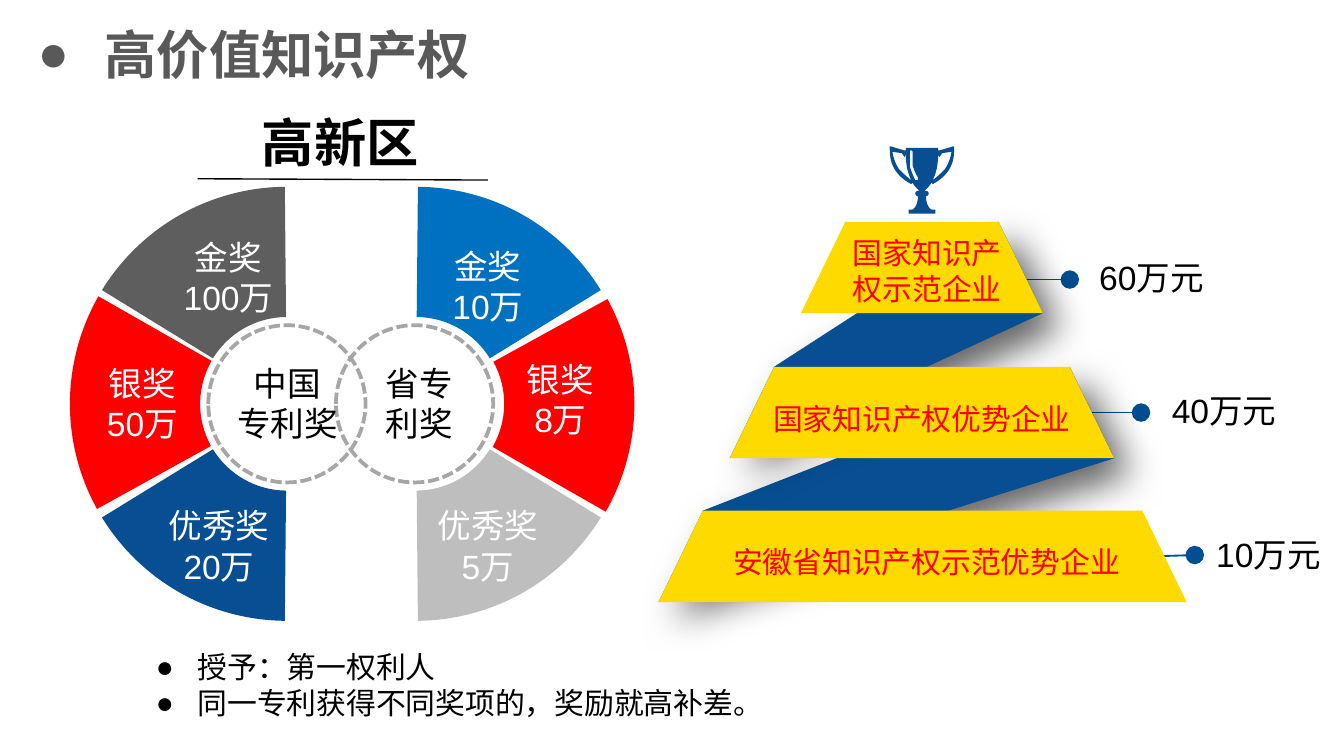
from lxml.etree import SubElement
from pptx import Presentation
from pptx.dml.color import RGBColor
from pptx.enum.dml import MSO_LINE_DASH_STYLE as Dash
from pptx.enum.shapes import MSO_CONNECTOR as Connector, MSO_SHAPE as Shape
from pptx.enum.text import MSO_ANCHOR as Anchor, MSO_AUTO_SIZE as AutoSize, PP_ALIGN as Align
from pptx.oxml.ns import qn
from pptx.util import Inches, Pt

COLORS = {
    "black": "000000", "white": "FFFFFF", "title": "595959", "red": "FF0000",
    "sky": "0070C0", "silver": "BEBEBE", "gray": "5E5E5E", "navy": "074F92",
    "dash": "A6A6A6", "pointer": "034D92", "yellow": "FEDA00",
}
RING_SIZE = 3.23
LEFT_RING, RIGHT_RING, RING_TOP = 0.52, 1.48, 1.39
CORNER_ARC = (162.32, 197.05, 0.3)
SIDE_ARC = (161.85, 197.05, 0.3)
TIER_HEIGHT, TIER_SLANT = 0.68, 0.33
TROPHY_AXIS = 6.86
CUP_OUTLINE = [
    (6.86, 1.1), (6.74, 1.1), (6.74, 1.11, 6.74, 1.12, 6.74, 1.12), (6.73, 1.12),
    (6.63, 1.09), (6.62, 1.09), (6.62, 1.11), (6.62, 1.19, 6.64, 1.24, 6.67, 1.28),
    (6.7, 1.32, 6.74, 1.35, 6.78, 1.37), (6.79, 1.36),
    (6.8, 1.38, 6.82, 1.4, 6.84, 1.42), (6.83, 1.42),
    (6.82, 1.42, 6.81, 1.43, 6.81, 1.44), (6.81, 1.45, 6.82, 1.46, 6.83, 1.46),
    (6.83, 1.5, 6.82, 1.54, 6.79, 1.56), (6.76, 1.56), (6.76, 1.59), (6.86, 1.59),
]
HANDLE_GAP = [
    (6.78, 1.34), (6.75, 1.28, 6.74, 1.22, 6.74, 1.15), (6.73, 1.17), (6.71, 1.14),
    (6.64, 1.13), (6.65, 1.19, 6.67, 1.23, 6.69, 1.26), (6.72, 1.29, 6.75, 1.32, 6.78, 1.34),
]
CUP_SHINE = [
    (6.77, 1.13), (6.77, 1.17, 6.77, 1.2, 6.77, 1.24), (6.78, 1.27, 6.79, 1.3, 6.81, 1.34),
    (6.81, 1.34, 6.82, 1.34, 6.83, 1.34), (6.83, 1.33, 6.83, 1.33, 6.83, 1.32),
    (6.81, 1.29, 6.8, 1.26, 6.79, 1.23), (6.79, 1.2, 6.79, 1.17, 6.79, 1.13),
    (6.79, 1.12, 6.78, 1.12, 6.78, 1.12), (6.77, 1.12, 6.77, 1.12, 6.77, 1.13),
]


def color(name):
    return RGBColor.from_string(COLORS[name])


def paint(shape, fill):
    shape.shadow.inherit = False
    shape.fill.solid()
    shape.fill.fore_color.rgb = color(fill)
    shape.line.fill.background()


def write(frame, lines, size, ink, align=Align.LEFT, bold=False, font="Arial", indent=0):
    frame.text = "\n".join(lines)
    for paragraph in frame.paragraphs:
        spacing = {"alignment": align, "space_before": Pt(0), "space_after": Pt(0)}
        for name, value in spacing.items():
            setattr(paragraph, name, value)
        if indent:
            props = paragraph._p.get_or_add_pPr()
            props.set("marL", str(Inches(indent)))
            props.set("indent", str(-Inches(indent)))
            SubElement(props, qn("a:buFont"), typeface="Arial")
            SubElement(props, qn("a:buChar"), char="●")
        for run in paragraph.runs:
            for name, value in {"name": font, "size": Pt(size), "bold": bold}.items():
                setattr(run.font, name, value)
            run.font.color.rgb = color(ink)


def place(placeholder, left, top, width, height, frame_format):
    box = {"left": left, "top": top, "width": width, "height": height}
    for name, value in box.items():
        setattr(placeholder, name, Inches(value))
    for name, value in frame_format.items():
        setattr(placeholder.text_frame, name, value)


def add_label(shapes, left, top, width, height, lines, size, ink, **style):
    frame = shapes.add_textbox(*map(Inches, (left, top, width, height))).text_frame
    frame.word_wrap = True
    frame.auto_size = AutoSize.SHAPE_TO_FIT_TEXT
    write(frame, lines, size, ink, **style)


def add_sector(shapes, left, fill, arc, flips=(), rotation=0):
    sector = shapes.add_shape(
        Shape.BLOCK_ARC, *map(Inches, (left, RING_TOP, RING_SIZE, RING_SIZE)))
    for index, value in enumerate(arc):
        sector.adjustments[index] = value
    sector.rotation = rotation
    for flip in flips:
        sector._element.spPr.xfrm.set(flip, "1")
    paint(sector, fill)


def add_hub(shapes, left):
    hub = shapes.add_shape(Shape.OVAL, *map(Inches, (left, 2.42, 1.17, 1.17)))
    hub.shadow.inherit = False
    hub.fill.background()
    hub.line.color.rgb = color("dash")
    hub.line.width = Pt(2)
    hub.line.dash_style = Dash.SQUARE_DOT
    hub.line._get_or_add_ln().find(qn("a:prstDash")).set("val", "sysDash")


def add_line(shapes, start, end, ink, width, dot=False):
    line = shapes.add_connector(Connector.STRAIGHT, *map(Inches, start + end))
    line.line.color.rgb = color(ink)
    line.line.width = Pt(width)
    if dot:
        SubElement(line.line._get_or_add_ln(), qn("a:tailEnd"), type="oval", w="lg", len="lg")
    SubElement(line._element.spPr, qn("a:effectLst"))


def add_outline(shapes, contours, fill):
    contours = [[(Inches(x), Inches(y)) for x, y in contour] for contour in contours]
    builder = shapes.build_freeform(*contours[0][0])
    for index, contour in enumerate(contours):
        if index:
            builder.move_to(*contour[0])
        builder.add_line_segments(contour[1:], close=True)
    outline = builder.convert_to_shape()
    paint(outline, fill)
    return outline


def cast_shadow(shape):
    effects = shape._element.spPr.find(qn("a:effectLst"))
    shadow = SubElement(effects, qn("a:outerShdw"), blurRad=str(Pt(20)), dist=str(Pt(12)),
                        dir="2700000", algn="tl", rotWithShape="0")
    tint = SubElement(shadow, qn("a:srgbClr"), val=COLORS["black"])
    SubElement(tint, qn("a:alpha"), val="60000")


def trace(segments, steps=6):
    points = [segments[0]]
    for segment in segments[1:]:
        if len(segment) == 2:
            points.append(segment)
            continue
        knots = [points[-1], segment[:2], segment[2:4], segment[4:]]
        for step in range(1, steps + 1):
            t = step / steps
            weights = ((1 - t) ** 3, 3 * t * (1 - t) ** 2, 3 * t * t * (1 - t), t ** 3)
            points.append(tuple(sum(w * knot[axis] for w, knot in zip(weights, knots))
                                for axis in (0, 1)))
    return points


def mirror(points):
    return [(2 * TROPHY_AXIS - x, y) for x, y in reversed(points)]


def add_trophy(shapes):
    cup, gap = trace(CUP_OUTLINE), trace(HANDLE_GAP)
    add_outline(shapes, [cup + mirror(cup), gap, mirror(gap), trace(CUP_SHINE)], "navy")


def tier_corners(left, top, right):
    bottom = top + TIER_HEIGHT
    return [(left + TIER_SLANT, top), (right - TIER_SLANT, top), (right, bottom), (left, bottom)]


def add_pyramid(shapes):
    group = shapes.add_group_shape().shapes
    tiers = [tier_corners(*tier) for tier in
             ((5.96, 1.65, 7.76), (5.43, 2.73, 8.29), (4.9, 3.8, 8.83))]
    for upper, lower in reversed(list(zip(tiers, tiers[1:]))):
        cast_shadow(add_outline(group, [[upper[1], lower[0], lower[3], upper[2]]], "navy"))
    for tier in tiers:
        add_outline(group, [tier], "yellow")
    add_label(group, 6.2, 1.7, 1.4, 0.64, ["国家知识产权示范企业"], 16, "red", align=Align.CENTER)
    for left, top, width, name in ((5.59, 2.93, 2.54, "国家知识产权优势企业"),
                                   (5.26, 4, 3.27, "安徽省知识产权示范优势企业")):
        add_label(shapes, left, top, width, 0.37, [name], 16, "red", align=Align.CENTER)
    for left, top, amount in ((8.08, 1.86, "60万元"), (8.62, 2.85, "40万元"),
                              (8.95, 3.92, "10万元")):
        add_label(shapes, left, top, 0.98, 0.4, [amount], 18, "black")


def add_award_rings(shapes):
    add_sector(shapes, LEFT_RING, "red", SIDE_ARC, rotation=241.3)
    add_sector(shapes, RIGHT_RING + 0.01, "red", SIDE_ARC, rotation=61.4)
    for left, fill, flips in ((RIGHT_RING, "sky", ()), (RIGHT_RING, "silver", ("flipV",)),
                              (LEFT_RING, "gray", ("flipH",)),
                              (LEFT_RING, "navy", ("flipH", "flipV"))):
        add_sector(shapes, left, fill, CORNER_ARC, flips)
    for left in (1.55, 2.5):
        add_hub(shapes, left)
    awards = [
        (1.61, 2.65, "中国", "专利奖", "black"), (2.59, 2.65, "省专", "利奖", "black"),
        (1.17, 1.71, "金奖", "100万", "white"), (0.53, 2.65, "银奖", "50万", "white"),
        (1.1, 3.71, "优秀奖", "20万", "white"), (3.1, 1.78, "金奖", "10万", "white"),
        (3.64, 2.62, "银奖", "8万", "white"), (3.1, 3.71, "优秀奖", "5万", "white"),
    ]
    for left, top, award, amount, ink in awards:
        add_label(shapes, left, top, 1.06, 0.71, [award, amount], 18, ink, align=Align.CENTER)


def main():
    deck = Presentation()
    deck.slide_width, deck.slide_height = Inches(10), Inches(10 * 9 / 16)
    slide = deck.slides.add_slide(deck.slide_layouts[1])
    shapes = slide.shapes
    title, notes = shapes.title, slide.placeholders[1]
    place(title, 0.28, 0.19, 3.48, 0.42, {
        "margin_left": 0, "margin_right": 0, "vertical_anchor": Anchor.MIDDLE,
        "word_wrap": True, "auto_size": AutoSize.NONE})
    write(title.text_frame, ["高价值知识产权"], 28, "title", bold=True,
          font="Noto Sans CJK SC", indent=0.5)
    place(notes, 1.06, 4.78, 4.67, 0.64, {
        "vertical_anchor": Anchor.TOP, "word_wrap": True,
        "auto_size": AutoSize.SHAPE_TO_FIT_TEXT})
    write(notes.text_frame, ["授予：第一权利人", "同一专利获得不同奖项的，奖励就高补差。"],
          16, "black", indent=0.31)
    add_award_rings(shapes)
    add_line(shapes, (1.47, 1.33), (3.63, 1.34), "black", 0.75)
    add_label(shapes, 1.85, 0.77, 1.62, 0.57, ["高新区"], 28, "black", bold=True)
    for start, end in (((7.5, 2.08), (7.96, 2.08)), ((7.76, 3.07), (8.49, 3.07)),
                       ((7.91, 4.16), (8.89, 4.13))):
        add_line(shapes, start, end, "pointer", 1, dot=True)
    add_pyramid(shapes)
    add_trophy(shapes)
    deck.save("out.pptx")


if __name__ == "__main__":
    main()
